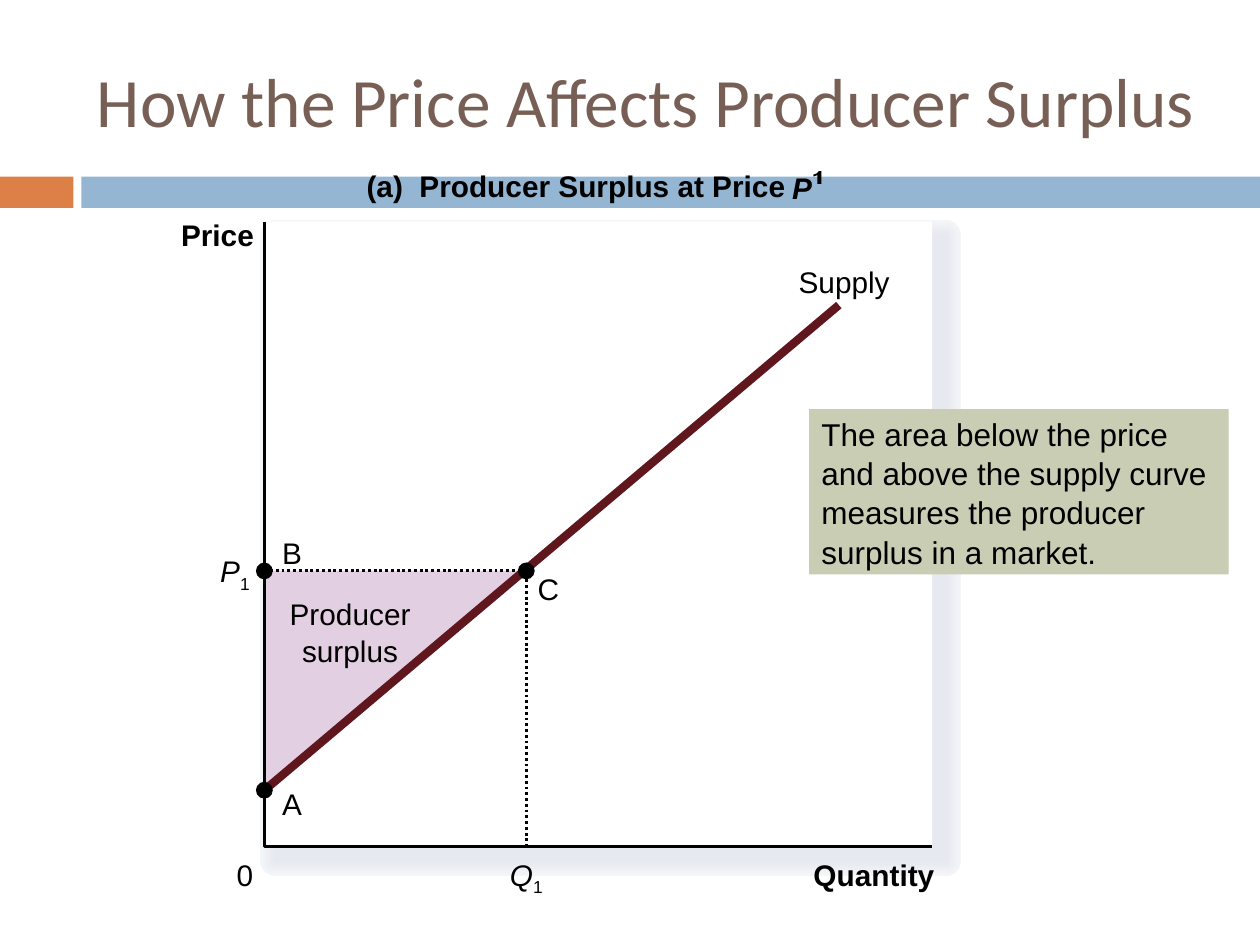
from dataclasses import dataclass

import pptx
import pptx.dml.color
import pptx.enum.dml
import pptx.enum.shapes
import pptx.enum.text
import pptx.oxml
import pptx.util

Cm, Pt = pptx.util.Cm, pptx.util.Pt
SHAPE = pptx.enum.shapes.MSO_SHAPE
ANCHOR = pptx.enum.text.MSO_ANCHOR
ALIGN = pptx.enum.text.PP_ALIGN


@dataclass(frozen=True)
class Theme:
    title: str = "775F55"
    orange: str = "DD8047"
    blue: str = "94B6D2"
    ink: str = "000000"
    paper: str = "FFFFFF"
    surplus: str = "E2CFE1"
    supply: str = "5F161D"
    note: str = "C9CDB3"
    shadow: tuple = ("F3F6F9", "F2F4F8", "F1F4F7", "F0F2F5", "EEF1F4", "EDEFF3",
                     "EBEEF2", "EAECF1", "E9EBF0", "E7EAEF", "E6E9EF")
    title_font: str = "Calibri"
    body_font: str = "Arial"
    title_size: float = 39.6
    label_size: float = 17
    note_size: float = 18
    thin: float = 1.63
    thick: float = 4.75


THEME = Theme()


def rgb(color):
    return pptx.dml.color.RGBColor.from_string(color)


def apply(obj, values):
    for name, value in values.items():
        setattr(obj, name, value)


def paint(sp, fill=None, line=None, width=0, dash=None):
    """Set fill, outline and shadow; None means no fill or no line."""
    sp.shadow.inherit = False
    if fill:
        sp.fill.solid()
        sp.fill.fore_color.rgb = rgb(fill)
    else:
        sp.fill.background()
    if line:
        sp.line.color.rgb = rgb(line)
        apply(sp.line, {"width": Pt(width), "dash_style": dash})
    else:
        sp.line.fill.background()


def add_run(p, text, color, **font):
    r = p.add_run()
    r.text = text
    r.font.color.rgb = rgb(color)
    apply(r.font, font)
    return r


def add_shape(s, kind, box, **style):
    sp = s.shapes.add_shape(kind, *map(Cm, box))
    paint(sp, **style)
    return sp


def add_outline(s, box, points, close, **style):
    x, y = box[:2]
    points = [(Cm(x + px), Cm(y + py)) for px, py in points]
    builder = s.shapes.build_freeform(*points[0])
    builder.add_line_segments(points[1:], close=close)
    paint(builder.convert_to_shape(), **style)


def add_label(s, box, at, width, text, subscript="", **font):
    x, y = box[:2]
    tf = s.shapes.add_textbox(Cm(x + at[0]), Cm(y + at[1]), Cm(width), Cm(0.81)).text_frame
    apply(tf, {"margin_left": 0, "margin_top": 0, "margin_right": 0,
               "margin_bottom": 0, "word_wrap": False})
    base = {"name": THEME.body_font, "size": Pt(THEME.label_size)}
    p = tf.paragraphs[0]
    add_run(p, text, THEME.ink, **base, **font)
    if subscript:
        r = add_run(p, subscript, THEME.ink, **base)
        r.font._element.set("baseline", "-25000")


def add_title(s, box):
    sp = s.shapes.title
    apply(sp, dict(zip(("left", "top", "width", "height"), map(Cm, box))))
    tf = sp.text_frame
    apply(tf, {"vertical_anchor": ANCHOR.MIDDLE, "word_wrap": True, "margin_right": 0})
    p = tf.paragraphs[0]
    p.alignment = ALIGN.LEFT
    add_run(p, "How the Price Affects Producer Surplus", THEME.title,
            name=THEME.title_font, size=Pt(THEME.title_size))


def add_band(s, box):
    x, y, w, h = box
    block, start = 1.48, 1.64
    add_shape(s, SHAPE.RECTANGLE, (x, y, block, h), fill=THEME.orange)
    add_shape(s, SHAPE.RECTANGLE, (x + start, y, w - start, h), fill=THEME.blue)


def add_plot_area(s, box):
    """White plot area over a soft shadow of ever narrower outlines."""
    x, y, w, h = box
    for i, color in enumerate(THEME.shadow):
        add_shape(s, SHAPE.RECTANGLE, (x + 0.23, y + 0.28, w + 0.05, h),
                  fill=color, line=color, width=17.5 - 1.59 * i)
    add_shape(s, SHAPE.RECTANGLE, box, fill=THEME.paper)


def add_supply_line(s, box, start, end):
    x, y = box[:2]
    line = s.shapes.add_connector(
        pptx.enum.shapes.MSO_CONNECTOR.STRAIGHT,
        Cm(x + start[0]), Cm(y + start[1]), Cm(x + end[0]), Cm(y + end[1]))
    line.line.color.rgb = rgb(THEME.supply)
    line.line.width = Pt(THEME.thick)
    line._element.spPr.append(pptx.oxml.parse_xml(
        '<a:effectLst xmlns:a="http://schemas.openxmlformats.org/drawingml/2006/main"/>'))


def add_diagram(s, box):
    x, y, w, h = box
    a, b, c = (0, 11.46), (0, 7.04), (5.28, 7.04)
    axis_labels = 12.8
    add_plot_area(s, box)

    add_outline(s, box, [c, b, a], True, fill=THEME.surplus)
    add_label(s, box, (0.51, 7.54), 2.67, "Producer")
    add_label(s, box, (0.76, 8.28), 2.18, "surplus")

    add_outline(s, box, [(0, 0), (0, h), (w, h)], False, line=THEME.ink, width=THEME.thin)
    add_label(s, box, (11.07, axis_labels), 2.69, "Quantity", bold=True)
    add_label(s, box, (2.06, -1.09), 8.89, "(a)  Producer Surplus at Price", bold=True)
    add_label(s, box, (10.64, -1.04), 0.69, "P", bold=True, italic=True)
    numeral = [(11.23, -1.02), (11.18, -1.02), (11.13, -0.97), (11.07, -0.95),
               (11.07, -0.91), (11.15, -0.94), (11.15, -0.76), (11.23, -0.76)]
    add_outline(s, box, numeral, True, fill=THEME.ink)
    add_label(s, box, (-1.68, -0.1), 1.75, "Price", bold=True)
    add_label(s, box, (-0.56, axis_labels), 0.61, "0")

    add_supply_line(s, box, a, (11.58, 1.68))
    add_label(s, box, (10.77, 0.84), 2.03, "Supply")

    dot = 0.34
    for name, (px, py), at in (("B", b, (0.36, 6.32)), ("A", a, (0.36, 11.38)),
                               ("C", c, (5.51, 7.04))):
        add_shape(s, SHAPE.OVAL, (x + px - dot / 2, y + py - dot / 2, dot, dot),
                  fill=THEME.ink)
        add_label(s, box, at, 0.67, name)

    add_outline(s, box, [b, c, (c[0], h)], False, line=THEME.ink, width=THEME.thin,
                dash=pptx.enum.dml.MSO_LINE.ROUND_DOT)
    add_label(s, box, (4.95, axis_labels), 0.69, "Q", "1", italic=True)
    add_label(s, box, (-0.89, 6.68), 0.61, "P", "1", italic=True)


def add_note(s, box):
    tf = add_shape(s, SHAPE.RECTANGLE, box, fill=THEME.note).text_frame
    apply(tf, {"word_wrap": True, "vertical_anchor": ANCHOR.MIDDLE})
    p = tf.paragraphs[0]
    apply(p, {"alignment": ALIGN.LEFT, "line_spacing": 1.04})
    add_run(p, "The area below the price and above the supply curve measures "
            "the producer surplus in a market.", THEME.ink,
            name=THEME.body_font, size=Pt(THEME.note_size))


def main():
    prs = pptx.Presentation()
    apply(prs, {"slide_width": Cm(25.4), "slide_height": Cm(19.05)})
    s = prs.slides.add_slide(prs.slide_layouts[5])
    add_band(s, (0, 3.56, 25.4, 0.63))
    add_title(s, (1.7, 0.64, 22.66, 2.74))
    add_diagram(s, (5.33, 4.47, 13.46, 12.6))
    add_note(s, (16.31, 8.25, 8.46, 3.33))
    prs.save("out.pptx")


if __name__ == "__main__":
    main()
